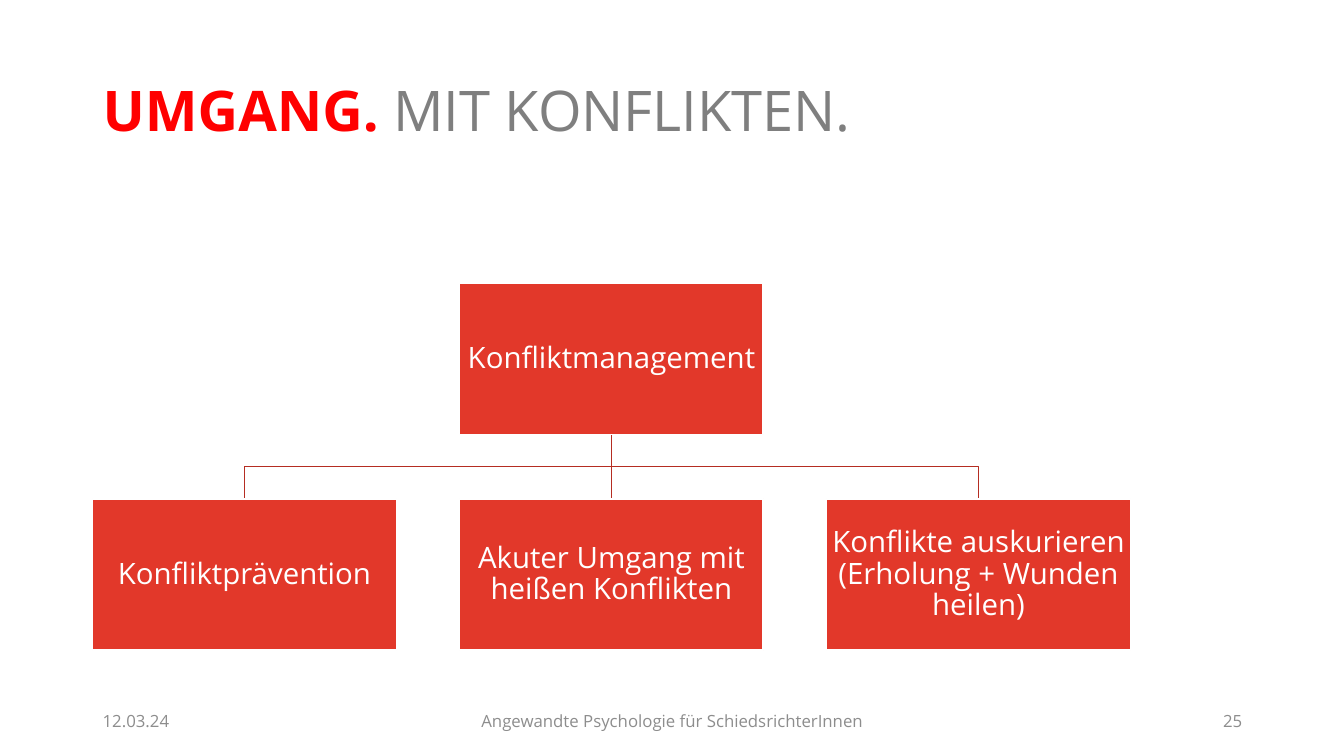
from lxml.etree import SubElement
from pptx import Presentation
from pptx.dml.color import RGBColor
from pptx.enum.shapes import MSO_CONNECTOR, MSO_SHAPE
from pptx.enum.text import MSO_ANCHOR, PP_ALIGN
from pptx.oxml.ns import qn
from pptx.util import Inches, Pt

FONT = "Open Sans"
RED, WHITE, GREY = "E2382A", "FFFFFF", "8D8D8D"
WIRE = "B52D22"


def color(code):
    return RGBColor.from_string(code)


def write(frame, runs, size, align=PP_ALIGN.LEFT, space=1.0):
    frame.word_wrap = True
    frame.vertical_anchor = MSO_ANCHOR.MIDDLE
    para = frame.paragraphs[0]
    para.alignment = align
    para.line_spacing = space
    for text, code, bold in runs:
        run = para.add_run()
        run.text = text
        run.font.name = FONT
        run.font.size = Pt(size)
        run.font.bold = bold
        run.font.color.rgb = color(code)


def label(slide, box, runs, size, align=PP_ALIGN.LEFT, space=1.0):
    field = slide.shapes.add_textbox(*map(Inches, box))
    write(field.text_frame, runs, size, align, space)


def title(slide, box):
    runs = [("UMGANG. ", "FF0000", True), ("MIT KONFLIKTEN.", "7F7F7F", False)]
    label(slide, box, runs, 40, space=0.9)


def node(slide, box, text):
    card = slide.shapes.add_shape(MSO_SHAPE.RECTANGLE, *map(Inches, box))
    card.shadow.inherit = False
    card.fill.solid()
    card.fill.fore_color.rgb = color(RED)
    card.line.color.rgb = color(WHITE)
    card.line.width = Pt(1)
    frame = card.text_frame
    frame.margin_left = frame.margin_right = Inches(0.01)
    frame.margin_top = frame.margin_bottom = Inches(0.01)
    write(frame, [(text, WHITE, False)], 21, PP_ALIGN.CENTER, 0.9)


def link(slide, start, end):
    (x, y), (to, low) = start, end
    if x == to:
        wire = slide.shapes.add_connector(
            MSO_CONNECTOR.STRAIGHT, *map(Inches, (x, y, to, low)))
        SubElement(wire.line._get_or_add_ln().getparent(), qn("a:effectLst"))
    else:
        mid = (y + low) / 2
        path = slide.shapes.build_freeform(Inches(x), Inches(y))
        bends = [(x, mid), (to, mid), (to, low)]
        path.add_line_segments(
            [(Inches(a), Inches(b)) for a, b in bends], close=False)
        wire = path.convert_to_shape()
        wire.shadow.inherit = False
        wire.fill.background()
    wire.line.color.rgb = color(WIRE)
    wire.line.width = Pt(1)


def tree(slide, box, root, leaves):
    left, top, width, height = box
    wide, high = 3.01, 1.5
    step = (width - wide) / (len(leaves) - 1)
    low = top + height - high
    hub = left + (width - wide) / 2
    spots = [left + i * step for i in range(len(leaves))]
    for x in spots:
        link(slide, (hub + wide / 2, top + high), (x + wide / 2, low))
    node(slide, (hub, top, wide, high), root)
    for x, text in zip(spots, leaves):
        node(slide, (x, low, wide, high), text)


def footer(slide, box):
    left, top, width, height = box
    side, mid = 3, 4.5
    parts = [
        (left, side, "12.03.24", PP_ALIGN.LEFT),
        (left + (width - mid) / 2, mid,
         "Angewandte Psychologie für SchiedsrichterInnen", PP_ALIGN.CENTER),
        (left + width - side, side, "25", PP_ALIGN.RIGHT),
    ]
    for x, wide, text, align in parts:
        label(slide, (x, top, wide, height), [(text, GREY, False)], 12, align)


def main():
    deck = Presentation()
    deck.slide_width, deck.slide_height = Inches(13.33), Inches(7.5)
    slide = deck.slides.add_slide(deck.slide_layouts[6])
    title(slide, (0.92, 0.4, 10.29, 1.45))
    tree(slide, (0.92, 2.81, 10.29, 3.64), "Konfliktmanagement", [
        "Konfliktprävention",
        "Akuter Umgang mit heißen Konflikten",
        "Konflikte auskurieren (Erholung + Wunden heilen)",
    ])
    footer(slide, (0.92, 6.95, 11.5, 0.4))
    deck.save("out.pptx")


if __name__ == "__main__":
    main()
